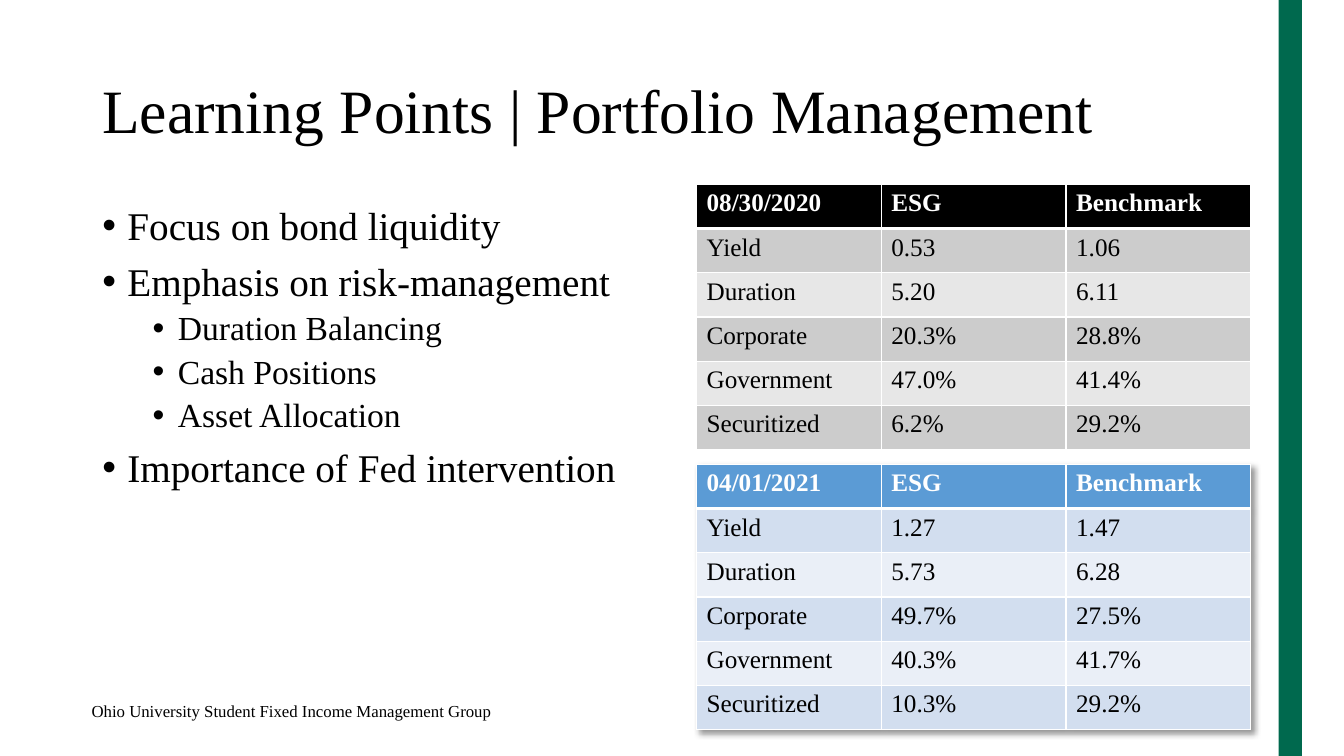
from dataclasses import dataclass

import pptx
import pptx.dml.color
import pptx.enum.shapes
import pptx.enum.text
import pptx.oxml
import pptx.oxml.ns
import pptx.util
from pptx.util import Pt


@dataclass(frozen=True)
class Theme:
    font: str = "Times New Roman"
    text: str = "000000"
    white: str = "FFFFFF"
    green: str = "00694E"
    grays: tuple = ("000000", "CCCCCC", "E7E7E7")
    blues: tuple = ("5B9BD5", "D2DEEF", "EAEFF7")
    title: int = 44
    body: int = 28
    sub: int = 24
    cell: int = 18
    footer: int = 12


THEME = Theme()
NS = pptx.oxml.ns.nsdecls("a")

BULLETS = [
    (0, "Focus on bond liquidity"),
    (0, "Emphasis on risk-management"),
    (1, "Duration Balancing"),
    (1, "Cash Positions"),
    (1, "Asset Allocation"),
    (0, "Importance of Fed intervention"),
]
AUGUST_2020 = [
    ("08/30/2020", "ESG", "Benchmark"),
    ("Yield", "0.53", "1.06"),
    ("Duration", "5.20", "6.11"),
    ("Corporate", "20.3%", "28.8%"),
    ("Government", "47.0%", "41.4%"),
    ("Securitized", "6.2%", "29.2%"),
]
APRIL_2021 = [
    ("04/01/2021", "ESG", "Benchmark"),
    ("Yield", "1.27", "1.47"),
    ("Duration", "5.73", "6.28"),
    ("Corporate", "49.7%", "27.5%"),
    ("Government", "40.3%", "41.7%"),
    ("Securitized", "10.3%", "29.2%"),
]


def rgb(color):
    return pptx.dml.color.RGBColor.from_string(color)


def write(p, text, size, color=THEME.text, bold=False, spacing=None, before=0):
    p.line_spacing = spacing
    p.space_before = Pt(before)
    r = p.add_run()
    r.text = text
    f = r.font
    f.name, f.size, f.bold = THEME.font, Pt(size), bold
    f.color.rgb = rgb(color)


def add_box(s, left, top, width, height, anchor=pptx.enum.text.MSO_ANCHOR.TOP):
    tf = s.shapes.add_textbox(Pt(left), Pt(top), Pt(width), Pt(height)).text_frame
    tf.word_wrap = True
    tf.vertical_anchor = anchor
    return tf


def add_bullets(tf, items):
    for i, (level, text) in enumerate(items):
        p = tf.add_paragraph() if i else tf.paragraphs[0]
        p.level = level
        pPr = p._p.get_or_add_pPr()
        pPr.set("marL", str(Pt(18 + 36 * level)))
        pPr.set("indent", str(Pt(-18)))
        pPr.append(pptx.oxml.parse_xml(f'<a:buFont {NS} typeface="Arial"/>'))
        pPr.append(pptx.oxml.parse_xml(f'<a:buChar {NS} char="•"/>'))
        before = (5 if level else 10) if i else 0
        write(p, text, THEME.sub if level else THEME.body, spacing=0.9, before=before)


def set_borders(cell, **widths):
    """Draw white cell borders; widths are keyed by side: L, R, T, B."""
    tcPr = cell._tc.get_or_add_tcPr()
    for side, width in widths.items():
        tcPr.append(pptx.oxml.parse_xml(
            f'<a:ln{side} {NS} w="{Pt(width)}"><a:solidFill>'
            f'<a:srgbClr val="{THEME.white}"/></a:solidFill></a:ln{side}>'))


def add_shadow(table):
    table._tbl.tblPr.insert(0, pptx.oxml.parse_xml(
        f'<a:effectLst {NS}><a:outerShdw blurRad="{Pt(4)}" dist="{Pt(3)}" dir="2700000" '
        'algn="tl" rotWithShape="0"><a:srgbClr val="000000"><a:alpha val="40000"/>'
        '</a:srgbClr></a:outerShdw></a:effectLst>'))


def add_table(s, rows, top, palette):
    """Palette holds the header fill and the two alternating row fills."""
    table = s.shapes.add_table(len(rows), len(rows[0]), Pt(497.5), Pt(top),
                               Pt(396), Pt(31.55 * len(rows))).table
    table.horz_banding = False
    header, *bands = palette
    for i, row in enumerate(rows):
        for j, text in enumerate(row):
            cell = table.cell(i, j)
            set_borders(cell, L=1, R=1, T=3 if i == 1 else 1, B=1 if i else 3)
            cell.fill.solid()
            cell.fill.fore_color.rgb = rgb(bands[(i - 1) % 2] if i else header)
            write(cell.text_frame.paragraphs[0], text, THEME.cell,
                  color=THEME.text if i else THEME.white, bold=i == 0)
    return table


def add_side_bar(s):
    sp = s.shapes.add_shape(pptx.enum.shapes.MSO_SHAPE.RECTANGLE,
                            Pt(913.3), Pt(0), Pt(16.6), Pt(540))
    sp.shadow.inherit = False
    sp.fill.solid()
    sp.fill.fore_color.rgb = rgb(THEME.green)
    sp.line.fill.background()


def main():
    prs = pptx.Presentation()
    prs.slide_width, prs.slide_height = Pt(960), Pt(540)
    s = prs.slides.add_slide(prs.slide_layouts[6])

    footer = add_box(s, 58.3, 496.8, 480, 21.6)
    write(footer.paragraphs[0], "Ohio University Student Fixed Income Management Group",
          THEME.footer)
    add_side_bar(s)
    title = add_box(s, 66, 28.75, 828, 104.4, pptx.enum.text.MSO_ANCHOR.MIDDLE)
    write(title.paragraphs[0], "Learning Points | Portfolio Management",
          THEME.title, spacing=0.9)
    add_bullets(add_box(s, 66, 143.75, 828, 342.6), BULLETS)
    add_table(s, AUGUST_2020, 131.75, THEME.grays)
    add_shadow(add_table(s, APRIL_2021, 331.75, THEME.blues))

    prs.save("out.pptx")


if __name__ == "__main__":
    main()
